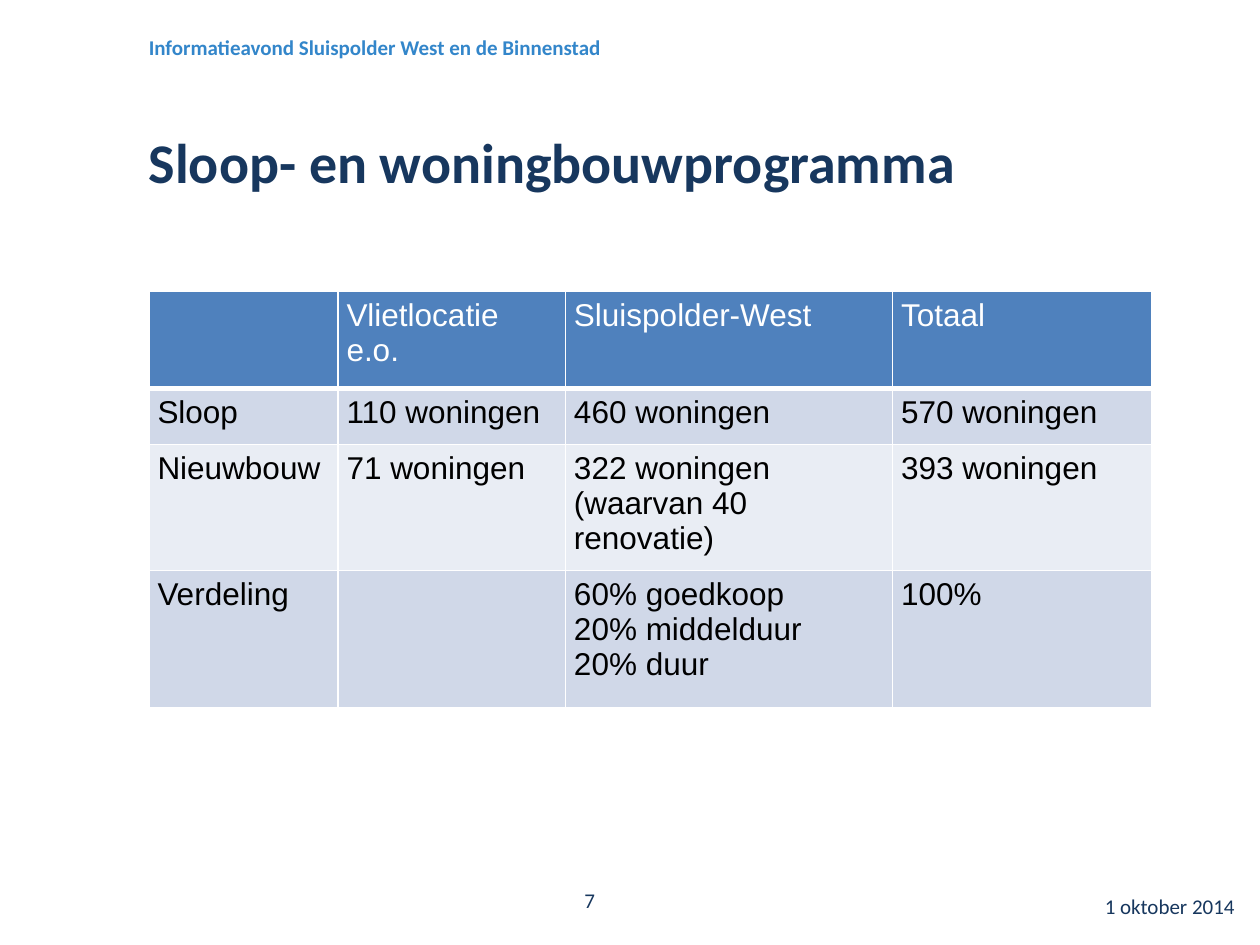
"""Build the slide with the demolition and housing programme table."""
import pptx
import pptx.dml.color
import pptx.enum.text
import pptx.oxml
import pptx.oxml.ns
import pptx.util

Pt = pptx.util.Pt
ALIGN = pptx.enum.text.PP_ALIGN
ANCHOR = pptx.enum.text.MSO_ANCHOR

COLORS = {
    "navy": "17375E",
    "sky": "3386CA",
    "header": "4F81BD",
    "band": "D0D8E8",
    "light": "E9EDF4",
    "white": "FFFFFF",
    "black": "000000",
}
PROGRAMME = [
    ["", "Vlietlocatie e.o.", "Sluispolder-West", "Totaal"],
    ["Sloop", "110 woningen", "460 woningen", "570 woningen"],
    ["Nieuwbouw", "71 woningen", "322 woningen \v(waarvan 40 renovatie)", "393 woningen"],
    ["Verdeling", "", "60% goedkoop\v20% middelduur\v20% duur", "100%"],
]
COLUMN_WIDTHS = [108, 130, 187, 148]
ROW_HEIGHTS = [55.5, 32, 55.5, 78.5]


def rgb(name):
    return pptx.dml.color.RGBColor.from_string(COLORS[name])


def style_font(paragraph, face, size, color, bold=False):
    font = paragraph.font
    font.name, font.size, font.bold = face, Pt(size), bold
    font.color.rgb = rgb(color)


def add_label(slide, box, text, size=12, color="navy", bold=False,
              align=ALIGN.LEFT, anchor=ANCHOR.MIDDLE, insets=(0, 0)):
    frame = slide.shapes.add_textbox(*map(Pt, box)).text_frame
    frame.word_wrap = True
    frame.vertical_anchor = anchor
    frame.margin_left = frame.margin_right = Pt(insets[0])
    frame.margin_top = frame.margin_bottom = Pt(insets[1])
    frame.text = text
    paragraph = frame.paragraphs[0]
    paragraph.alignment = align
    style_font(paragraph, "Calibri", size, color, bold)


def add_borders(cell, bottom):
    properties = cell._tc.get_or_add_tcPr()
    for side, width in zip("LRTB", (1, 1, 1, bottom)):
        properties.append(pptx.oxml.parse_xml(
            f'<a:ln{side} {pptx.oxml.ns.nsdecls("a")} w="{Pt(width)}"><a:solidFill>'
            f'<a:srgbClr val="{COLORS["white"]}"/></a:solidFill></a:ln{side}>'))


def add_programme(slide, left, top):
    table = slide.shapes.add_table(
        len(PROGRAMME), len(COLUMN_WIDTHS), Pt(left), Pt(top),
        Pt(sum(COLUMN_WIDTHS)), Pt(sum(ROW_HEIGHTS))).table
    table.first_row = table.horz_banding = False
    for column, width in zip(table.columns, COLUMN_WIDTHS):
        column.width = Pt(width)
    for index, (row, height, texts) in enumerate(zip(table.rows, ROW_HEIGHTS, PROGRAMME)):
        row.height = Pt(height)
        is_header = index == 0
        fill = "header" if is_header else "band" if index % 2 else "light"
        for cell, text in zip(row.cells, texts):
            add_borders(cell, 3 if is_header else 1)
            cell.fill.solid()
            cell.fill.fore_color.rgb = rgb(fill)
            cell.margin_left = cell.margin_right = Pt(5)
            cell.margin_top = cell.margin_bottom = Pt(3.6)
            cell.text_frame.text = text
            style_font(cell.text_frame.paragraphs[0], "Arial", 18,
                       "white" if is_header else "black")


def add_heading(slide, left, top, width):
    add_label(slide, (left, top, width, 29), "Informatieavond Sluispolder West en de Binnenstad",
              color="sky", bold=True, anchor=ANCHOR.TOP)
    add_label(slide, (left, top + 29, width, 63), "Sloop- en woningbouwprogramma",
              size=32, bold=True, anchor=ANCHOR.BOTTOM)


def add_footer(slide, left, top):
    add_label(slide, (left, top + 4, 168, 29), "7", align=ALIGN.RIGHT, insets=(7.2, 3.6))
    add_label(slide, (left + 358.5, top, 168, 44), "1 oktober 2014", align=ALIGN.RIGHT)


def main():
    presentation = pptx.Presentation()
    presentation.slide_width, presentation.slide_height = Pt(720), Pt(540)
    slide = presentation.slides.add_slide(presentation.slide_layouts[6])
    add_heading(slide, 85, 19.5, 503)
    add_programme(slide, 85, 166.5)
    add_footer(slide, 179, 496)
    presentation.save("out.pptx")


if __name__ == "__main__":
    main()
